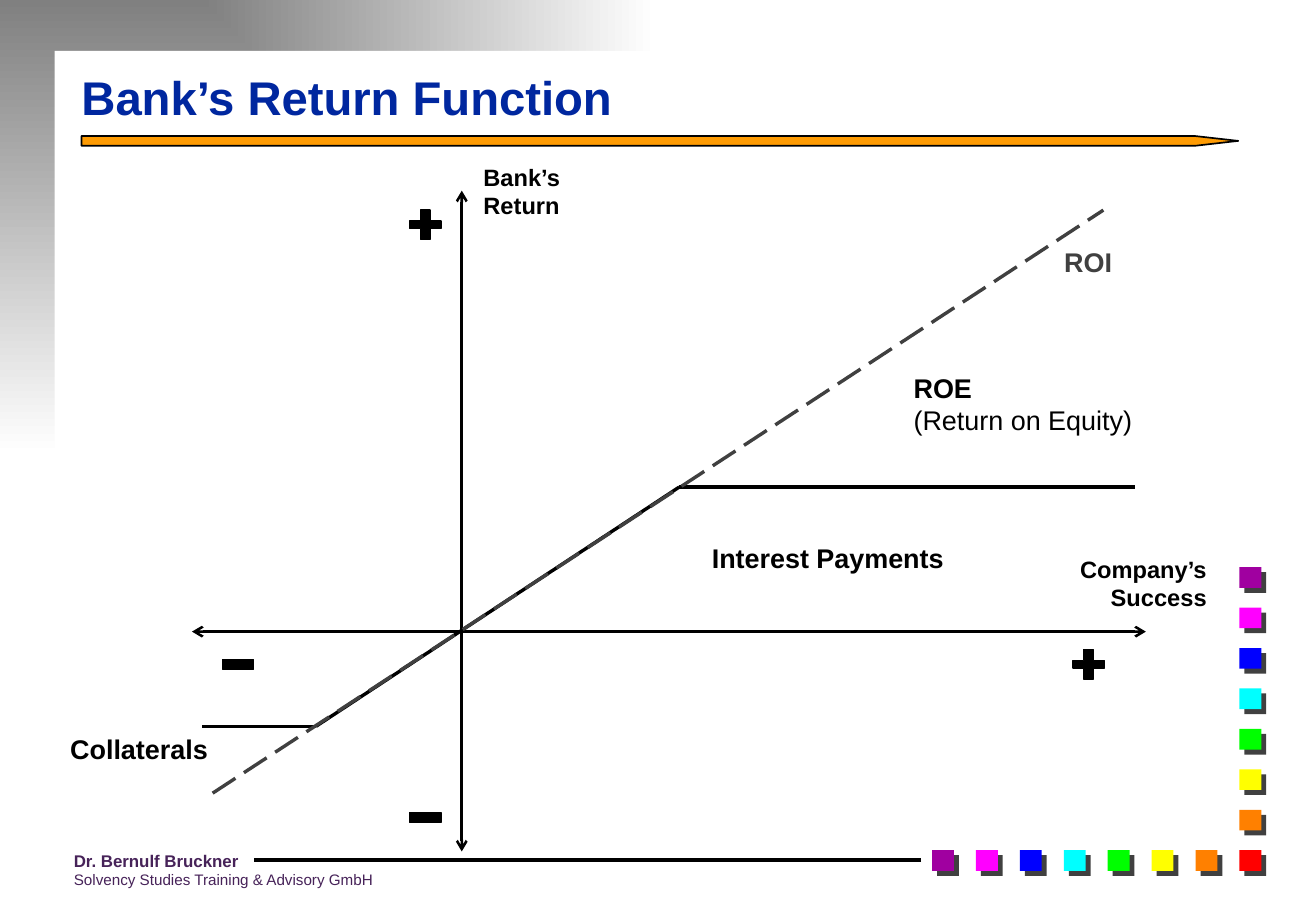
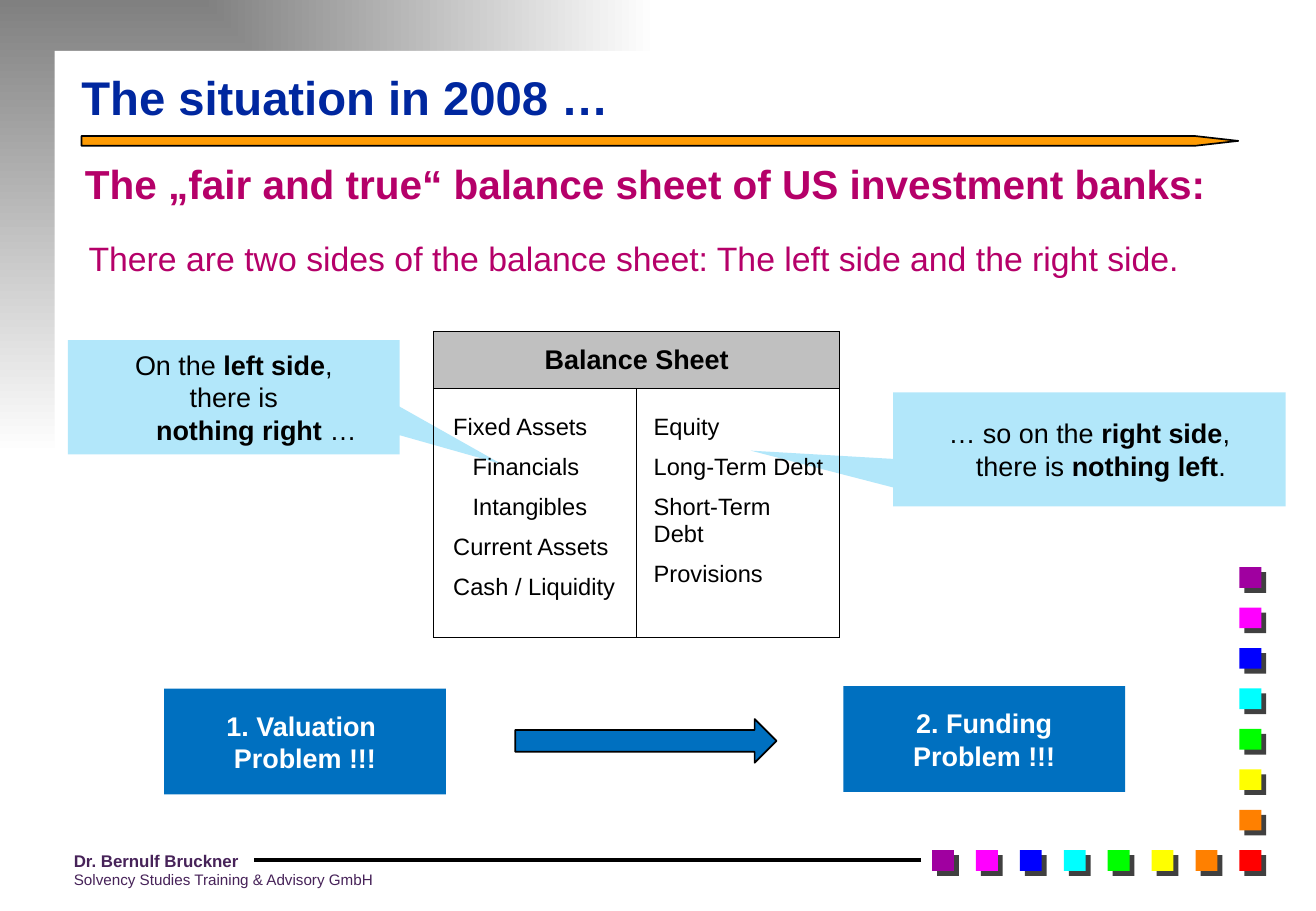
"""Build two slides on bank returns and the 2008 balance sheet."""
from dataclasses import dataclass

from lxml.etree import SubElement
from pptx import Presentation
from pptx.dml.color import RGBColor
from pptx.enum.dml import MSO_LINE
from pptx.enum.shapes import MSO_CONNECTOR, MSO_SHAPE
from pptx.enum.text import MSO_ANCHOR, MSO_AUTO_SIZE, PP_ALIGN
from pptx.oxml.ns import qn
from pptx.util import Inches, Pt


@dataclass(frozen=True)
class Theme:
    font: str = "Arial"
    black: str = "000000"
    white: str = "FFFFFF"
    title: str = "00279F"
    accent: str = "B50069"
    footer: str = "472359"
    band: str = "808080"
    dark: str = "404040"
    header: str = "C0C0C0"
    pencil: str = "FE9B03"
    problem: str = "0070C0"
    callout: str = "00B0F0"
    squares: tuple = ("FF0000", "FF8000", "FFFF00", "00FF00",
                      "00FFFF", "0000FF", "FF00FF", "A000A0")
    title_size: float = 28
    heading_size: float = 24
    subheading_size: float = 20
    body_size: float = 16
    label_size: float = 14
    author_size: float = 10
    company_size: float = 9
    thick: float = 2
    axis: float = 1.5
    outline: float = 1
    thin: float = 0.75


@dataclass
class Line:
    spans: list
    indent: float = 0
    size: float = 0


def bold(text):
    return Line([(text, True)])


def plain(text, indent=0):
    return Line([(text, False)], indent)


class Deck:
    def __init__(self, theme):
        self.theme = theme
        self.deck = Presentation()
        self.deck.slide_width = Inches(10.83)
        self.deck.slide_height = Inches(7.5)
        self.layout = self.deck.slide_layouts[5]
        self.page = None

    def start_page(self, title):
        self.page = self.deck.slides.add_slide(self.layout)
        box = self.page.shapes.title
        box.left, box.top, box.width, box.height = map(Inches, (0.57, 0.44, 9.1, 0.64))
        frame = box.text_frame
        frame.auto_size = MSO_AUTO_SIZE.NONE
        frame.vertical_anchor = MSO_ANCHOR.BOTTOM
        self.add_lines(frame, [bold(title)], self.theme.title_size, self.theme.title)

    def move_to_layout(self):
        for shape in list(self.page.shapes):
            if not shape.is_placeholder:
                self.layout.shapes.element.append(shape.element)

    def add_lines(self, frame, lines, size, color=None, align=PP_ALIGN.LEFT, gap=0):
        for index, line in enumerate(lines):
            para = frame.add_paragraph() if index else frame.paragraphs[0]
            para.alignment = align
            if index and gap:
                para.space_before = Pt(gap)
            if line.indent:
                properties = para._p.get_or_add_pPr()
                properties.set("marL", str(Inches(line.indent)))
                properties.set("indent", "0")
            for text, is_bold in line.spans:
                for number, part in enumerate(text.split("\n")):
                    if number:
                        para.add_line_break()
                    if not part:
                        continue
                    span = para.add_run()
                    span.text = part
                    span.font.name = self.theme.font
                    span.font.size = Pt(line.size or size)
                    span.font.bold = is_bold
                    span.font.color.rgb = RGBColor.from_string(color or self.theme.black)

    def text(self, place, lines, size, color=None, align=PP_ALIGN.LEFT, wrap=True):
        box = self.page.shapes.add_textbox(*map(Inches, place))
        box.text_frame.word_wrap = wrap
        self.add_lines(box.text_frame, lines, size, color, align)

    def shape(self, kind, place, fill, line=0, adjust=()):
        shape = self.page.shapes.add_shape(kind, *map(Inches, place))
        shape.shadow.inherit = False
        shape.fill.solid()
        shape.fill.fore_color.rgb = RGBColor.from_string(fill)
        if line:
            shape.line.color.rgb = RGBColor.from_string(self.theme.black)
            shape.line.width = Pt(line)
        else:
            shape.line.fill.background()
        for index, value in enumerate(adjust):
            shape.adjustments[index] = value
        return shape

    def panel(self, kind, place, fill, lines, color, wrap, adjust=()):
        shape = self.shape(kind, place, fill, adjust=adjust)
        frame = shape.text_frame
        frame.word_wrap = wrap
        frame.vertical_anchor = MSO_ANCHOR.MIDDLE
        self.add_lines(frame, lines, self.theme.body_size, color, PP_ALIGN.CENTER)
        return shape

    def callout(self, place, adjust, lines):
        shape = self.panel(MSO_SHAPE.RECTANGULAR_CALLOUT, place, self.theme.callout,
                           lines, self.theme.black, True, adjust)
        color = shape.element.spPr.find(qn("a:solidFill"))[0]
        SubElement(color, qn("a:alpha"), val="30000")

    def line(self, start, end, width, color=None, dashed=False, arrows=False):
        line = self.page.shapes.add_connector(
            MSO_CONNECTOR.STRAIGHT, *map(Inches, start + end))
        line.line.color.rgb = RGBColor.from_string(color or self.theme.black)
        line.line.width = Pt(width)
        if dashed:
            line.line.dash_style = MSO_LINE.LONG_DASH
        properties = line.element.spPr
        if arrows:
            for tag in ("a:headEnd", "a:tailEnd"):
                SubElement(properties.find(qn("a:ln")), qn(tag), type="arrow")
        SubElement(properties, qn("a:effectLst"))

    def corner_gradient(self, place):
        shape = self.shape(MSO_SHAPE.RECTANGLE, place, self.theme.band)
        shape.fill.gradient()
        for stop, color in zip(shape.fill.gradient_stops, (self.theme.band, self.theme.white)):
            stop.color.rgb = RGBColor.from_string(color)
        gradient = shape.element.spPr.find(qn("a:gradFill"))
        gradient.remove(gradient.find(qn("a:lin")))
        focus = SubElement(gradient, qn("a:path"), {"path": "rect"})
        SubElement(focus, qn("a:fillToRect"), l="0", t="0", r="100000", b="100000")

    def square(self, left, top, color):
        shape = self.shape(MSO_SHAPE.RECTANGLE, (left, top, 0.18, 0.17), color)
        effects = shape.element.spPr.find(qn("a:effectLst"))
        shadow = SubElement(effects, qn("a:outerShdw"), dist=str(Pt(4.2)),
                            dir="2700000", algn="ctr", rotWithShape="0")
        SubElement(shadow, qn("a:srgbClr"), val=self.theme.dark)

    def frame(self):
        theme = self.theme
        self.corner_gradient((0, 0, 10.82, 7.49))
        self.shape(MSO_SHAPE.RECTANGLE, (0.45, 0.42, 10.37, 7.07), theme.white)
        right, bottom, last = 10.2, 7, len(theme.squares) - 1
        step_left, step_up = (right - 7.67) / last, (bottom - 4.67) / last
        for index, color in enumerate(theme.squares):
            self.square(right - index * step_left, bottom, color)
            if index:
                self.square(right, bottom - index * step_up, color)
        self.shape(MSO_SHAPE.PENTAGON, (0.67, 1.12, 9.52, 0.08), theme.pencil,
                   theme.outline, (4.42,))
        self.line((7.58, 7.08), (2.09, 7.08), theme.thick)
        self.text((0.51, 6.95, 3.24, 0.42), [
            Line([("Dr. Bernulf Bruckner", True)], size=theme.author_size),
            Line([("Solvency Studies Training & Advisory GmbH", False)]),
        ], theme.company_size, theme.footer)

    def style_cell(self, cell, margins, fill=None):
        cell.margin_left, cell.margin_top, cell.margin_right, cell.margin_bottom = map(
            Inches, margins)
        properties = cell._tc.get_or_add_tcPr()
        for side in ("a:lnL", "a:lnR", "a:lnT", "a:lnB"):
            border = SubElement(properties, qn(side), w=str(Pt(self.theme.thin)))
            SubElement(SubElement(border, qn("a:solidFill")), qn("a:srgbClr"),
                       val=self.theme.black)
        if fill:
            cell.fill.solid()
            cell.fill.fore_color.rgb = RGBColor.from_string(fill)
        else:
            cell.fill.background()

    def balance_sheet(self, place, heading, assets, liabilities):
        theme = self.theme
        table = self.page.shapes.add_table(2, 2, *map(Inches, place)).table
        table.first_row = table.horz_banding = False
        table.rows[0].height = Inches(0.47)
        table.rows[1].height = Inches(place[3] - 0.47)
        for column, lines, margin in ((0, assets, 0.16), (1, liabilities, 0.14)):
            self.style_cell(table.cell(0, column), (0.1, 0.05, 0.1, 0.05), theme.header)
            body = table.cell(1, column)
            self.style_cell(body, (margin, 0.21, 0.1, 0.05))
            self.add_lines(body.text_frame, lines, theme.label_size, gap=8)
        header = table.cell(0, 0)
        header.merge(table.cell(0, 1))
        header.vertical_anchor = MSO_ANCHOR.MIDDLE
        self.add_lines(header.text_frame, [bold(heading)], theme.body_size,
                       align=PP_ALIGN.CENTER)


def return_function(deck):
    theme = deck.theme
    bank_floor, bank_cap = (2.6, 5.98), (5.59, 4.01)
    deck.line(bank_cap, (9.34, 4.01), theme.thick)
    deck.line(bank_floor, bank_cap, theme.thick)
    deck.line(bank_floor, (1.66, 5.98), theme.thick)
    deck.line((3.8, 1.57), (3.8, 7.01), theme.axis, arrows=True)
    deck.line((1.58, 5.2), (9.43, 5.2), theme.axis, arrows=True)
    for left, top in ((3.37, 1.73), (8.83, 5.35)):
        deck.shape(MSO_SHAPE.CROSS, (left, top, 0.26, 0.24), theme.black,
                   theme.thin, (0.375,))
    for left, top in ((1.83, 5.43), (3.37, 6.69)):
        deck.shape(MSO_SHAPE.RECTANGLE, (left, top, 0.26, 0.08), theme.black, theme.thin)
    deck.line((1.75, 6.53), (9.08, 1.73), theme.thick, theme.dark, dashed=True)
    deck.text((7.42, 3.01, 2.02, 0.64),
              [Line([("ROE\n", True), ("(Return on Equity)", False)])],
              theme.body_size, wrap=False)
    deck.text((5.76, 4.41, 2.14, 0.37), [bold("Interest Payments")],
              theme.body_size, wrap=False)
    deck.text((0.48, 5.98, 1.4, 0.37), [bold("Collaterals")], theme.body_size)
    deck.text((8.66, 1.97, 0.6, 0.37), [bold("ROI")], theme.body_size, theme.dark,
              wrap=False)
    deck.text((3.88, 1.29, 0.83, 0.57), [bold("Bank’s\nReturn")], theme.label_size,
              wrap=False)
    deck.text((8.78, 4.52, 1.25, 0.57), [bold("Company’s\nSuccess")], theme.label_size,
              align=PP_ALIGN.RIGHT, wrap=False)


def situation(deck):
    theme = deck.theme
    deck.text((0.6, 1.26, 9.57, 0.41),
              [bold("The „fair and true“ balance sheet of US investment banks:")],
              theme.heading_size, theme.accent)
    deck.text((0.63, 1.91, 9.41, 0.55),
              [plain("There are two sides of the balance sheet: "
                     "The left side and the right side.")],
              theme.subheading_size, theme.accent)
    deck.callout((7.35, 3.23, 3.23, 0.94), (-0.863, 0.011), [
        Line([("… so on the ", False), ("right side", True), (",", False)]),
        Line([("there is ", False), ("nothing left", True), (".", False)], indent=0.19),
    ])
    deck.callout((0.56, 2.8, 2.73, 0.94), (0.807, 0.586), [
        Line([("On the ", False), ("left side", True), (",", False)]),
        plain("there is"),
        Line([("nothing right ", True), ("…", False)], indent=0.37),
    ])
    deck.balance_sheet(
        (3.57, 2.73, 3.34, 2.52), "Balance Sheet",
        [plain("Fixed Assets"), plain("Financials", 0.16), plain("Intangibles", 0.16),
         plain("Current Assets"), plain("Cash / Liquidity")],
        [plain("Equity"), plain("Long-Term Debt"), plain("Short-Term Debt"),
         plain("Provisions")])
    for left, top, problem in ((1.35, 5.67, "1. Valuation "), (6.94, 5.65, "2. Funding")):
        deck.panel(MSO_SHAPE.RECTANGLE, (left, top, 2.32, 0.87), theme.problem,
                   [bold(problem), bold("Problem !!!")], theme.white, False)
    deck.shape(MSO_SHAPE.RIGHT_ARROW, (4.24, 5.92, 2.15, 0.36), theme.problem,
               theme.outline, (0.5, 0.5))


def main():
    deck = Deck(Theme())
    deck.start_page("Bank’s Return Function")
    deck.frame()
    deck.move_to_layout()
    return_function(deck)
    deck.start_page("The situation in 2008 …")
    situation(deck)
    deck.deck.save("out.pptx")


if __name__ == "__main__":
    main()
